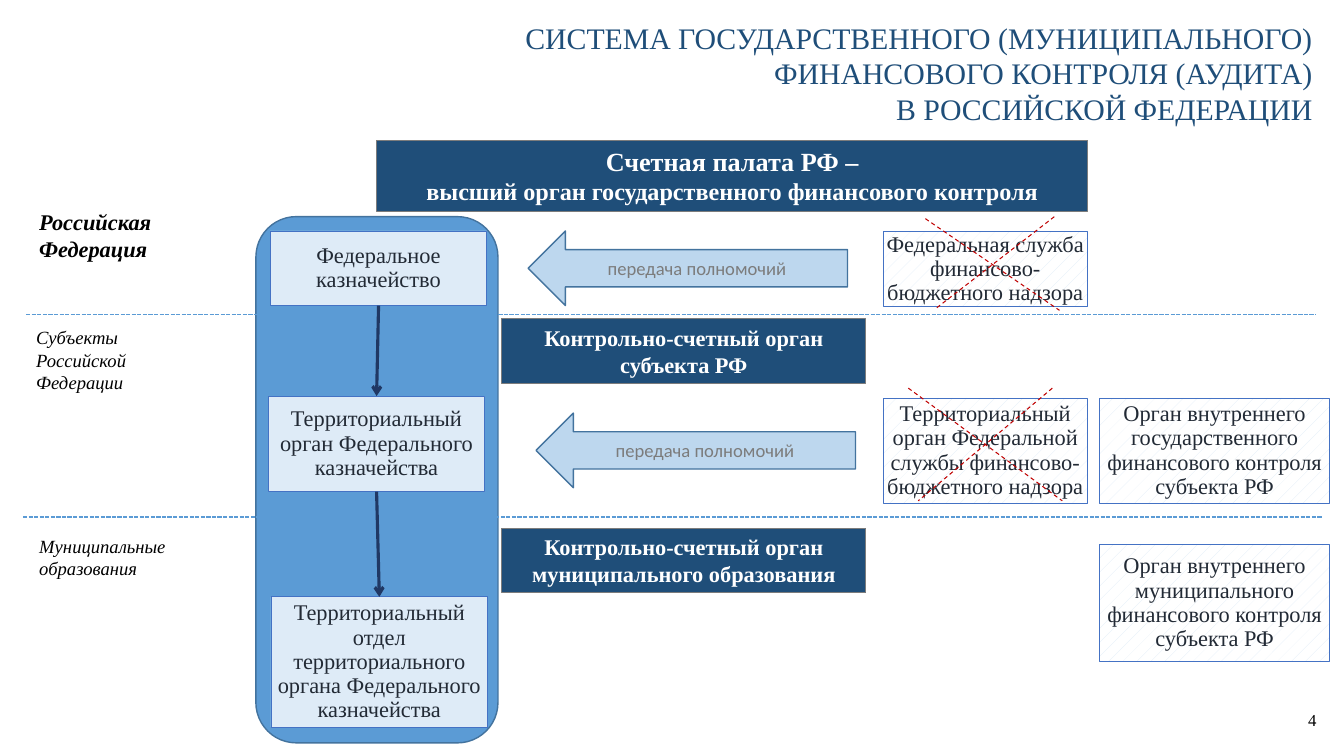
from lxml import etree
from pptx import Presentation
from pptx import util as u
from pptx.dml.color import RGBColor
from pptx.enum import dml, shapes, text
from pptx.oxml.ns import qn

Cm, Pt = u.Cm, u.Pt
rgb = RGBColor.from_string
KIND = shapes.MSO_SHAPE
LEFT, CENTER, RIGHT = text.PP_ALIGN.LEFT, text.PP_ALIGN.CENTER, text.PP_ALIGN.RIGHT
TOP, MIDDLE = text.MSO_ANCHOR.TOP, text.MSO_ANCHOR.MIDDLE
NAVY, GREY, PALE, BLUE, INK = "1F4E79", "7C7C7C", "DEEBF7", "4472C4", "222A35"
WIDE_INSET, THIN_INSET = (0.33, 0.17), (0.03, 0.03)

deck = Presentation()
deck.slide_width, deck.slide_height = Cm(33.87), Cm(19.05)
slide = deck.slides.add_slide(deck.slide_layouts[6])


def add_block(at, lines=(), sizes=(16,), color="000000", kind=None, fill=None, line=None,
              weight=1, hatched=False, align=CENTER, anchor=MIDDLE, inset=(0.25, 0.13),
              font="Times New Roman", bold=False, italic=False, spacing=None):
    """Add a shape, or a text box when kind is None, one paragraph per line."""
    place = [Cm(length) for length in at]
    if kind is None:
        block = slide.shapes.add_textbox(*place)
    else:
        block = slide.shapes.add_shape(kind, *place)
        block.shadow.inherit = False
        if hatched:
            block.fill.patterned()
            block.fill.pattern = dml.MSO_PATTERN.PERCENT_5
            block.fill.fore_color.rgb = rgb(fill)
            block.fill.back_color.rgb = rgb("FFFFFF")
        else:
            block.fill.solid()
            block.fill.fore_color.rgb = rgb(fill)
        block.line.color.rgb = rgb(line)
        block.line.width = Pt(weight)
    frame = block.text_frame
    frame.word_wrap = True
    frame.vertical_anchor = anchor
    frame.margin_left = frame.margin_right = Cm(inset[0])
    frame.margin_top = frame.margin_bottom = Cm(inset[1])
    for number, words in enumerate(lines):
        paragraph = frame.add_paragraph() if number else frame.paragraphs[0]
        paragraph.text = words
        paragraph.alignment = align
        if spacing:
            paragraph.line_spacing = spacing
        paragraph.font.name = font
        paragraph.font.size = Pt(sizes[min(number, len(sizes) - 1)])
        paragraph.font.bold, paragraph.font.italic = bold, italic
        paragraph.font.color.rgb = rgb(color)
    return block


def add_line(x1, y1, x2, y2, color, weight, dash=None):
    connector = slide.shapes.add_connector(
        shapes.MSO_CONNECTOR.STRAIGHT, Cm(x1), Cm(y1), Cm(x2), Cm(y2))
    connector.line.color.rgb = rgb(color)
    connector.line.width = Pt(weight)
    if dash:
        connector.line.dash_style = dash
    etree.SubElement(connector._element.spPr, qn("a:effectLst"))
    return connector


# Backdrop, page number, title
add_block((6.45, 5.46, 6.1, 13.26), kind=KIND.ROUNDED_RECTANGLE, fill="5B9BD5", line="43739E")
add_block((32.31, 17.63, 1.12, 1.02), ["4"], [12], align=RIGHT)
add_block((11.56, 0.94, 21.77, 1.8),
          ["СИСТЕМА ГОСУДАРСТВЕННОГО (МУНИЦИПАЛЬНОГО) ФИНАНСОВОГО КОНТРОЛЯ (АУДИТА)",
           "В РОССИЙСКОЙ ФЕДЕРАЦИИ"], [21.3], NAVY, align=RIGHT)

# Levels of government
for left, right, y in [(0.66, 33.17, 7.92), (0.58, 33.32, 13.03)]:
    add_line(left, y, right, y, "5B9BD5", 1, dml.MSO_LINE.SQUARE_DOT)

for left, top, height, level, size, bold in [
        (0.66, 5.08, 1.7, "Российская Федерация", 16, True),
        (0.58, 8.05, 2.06, "Субъекты Российской Федерации", 13.3, False),
        (0.66, 13.31, 1.47, "Муниципальные образования", 13.3, False)]:
    add_block((left, top, 4.9, height), [level], [size], align=LEFT, anchor=TOP,
              inset=WIDE_INSET, bold=bold, italic=True)

# External audit bodies
for at, lines, sizes in [
        ((9.5, 3.53, 17.91, 1.8),
         ["Счетная палата РФ –", "высший орган государственного финансового контроля"],
         [18.7, 17.3]),
        ((12.65, 8.03, 9.17, 1.63), ["Контрольно-счетный орган", "субъекта РФ"], [16]),
        ((12.65, 13.31, 9.17, 1.63),
         ["Контрольно-счетный орган", "муниципального образования"], [16])]:
    add_block(at, lines, sizes, "FFFFFF", KIND.RECTANGLE, NAVY, GREY, 0.75,
              anchor=TOP, bold=True)

# Treasury chain
treasury = [
    add_block((left, top, 5.46, height), [body], [16], INK, KIND.RECTANGLE, PALE, BLUE, 0.5,
              inset=THIN_INSET, spacing=0.9)
    for left, top, height, body in [
        (6.81, 5.82, 1.88, "Федеральное казначейство"),
        (6.76, 9.98, 2.41, "Территориальный орган Федерального казначейства"),
        (6.83, 15.04, 3.28,
         "Территориальный отдел территориального органа Федерального казначейства")]]

for upper, lower in zip(treasury, treasury[1:]):
    link = add_line(9.53, 7.7, 9.55, 9.98, "203864", 2.25)
    link.begin_connect(upper, 2)
    link.end_connect(lower, 0)
    etree.SubElement(link.line._get_or_add_ln(), qn("a:tailEnd"), type="arrow")

# Internal control bodies
for left, top, width, height, body in [
        (22.25, 5.84, 5.16, 1.88, "Федеральная служба финансово-бюджетного надзора"),
        (22.25, 10.03, 5.16, 2.66,
         "Территориальный орган Федеральной службы финансово-бюджетного надзора"),
        (27.71, 10.03, 5.8, 2.66,
         "Орган внутреннего государственного финансового контроля субъекта РФ"),
        (27.71, 13.72, 5.8, 2.95,
         "Орган внутреннего муниципального финансового контроля субъекта РФ")]:
    add_block((left, top, width, height), [body], [16], INK, KIND.RECTANGLE, PALE, BLUE, 0.5,
              hatched=True, inset=THIN_INSET, spacing=0.9)

# Transfer of powers from the abolished bodies
for left, top in [(13.31, 5.82), (13.51, 10.41)]:
    add_block((left, top, 8.05, 1.88), ["передача полномочий"], [13.3], GREY, KIND.LEFT_ARROW,
              "BDD7EE", "43739E", inset=WIDE_INSET, font="Calibri")

for strike in [(23.32, 5.51, 26.7, 7.82), (26.57, 5.46, 23.55, 7.8),
               (26.52, 9.78, 23.14, 12.62), (22.89, 9.78, 26.77, 12.62)]:
    add_line(*strike, "C00000", 0.75, dml.MSO_LINE.DASH)

deck.save("out.pptx")
